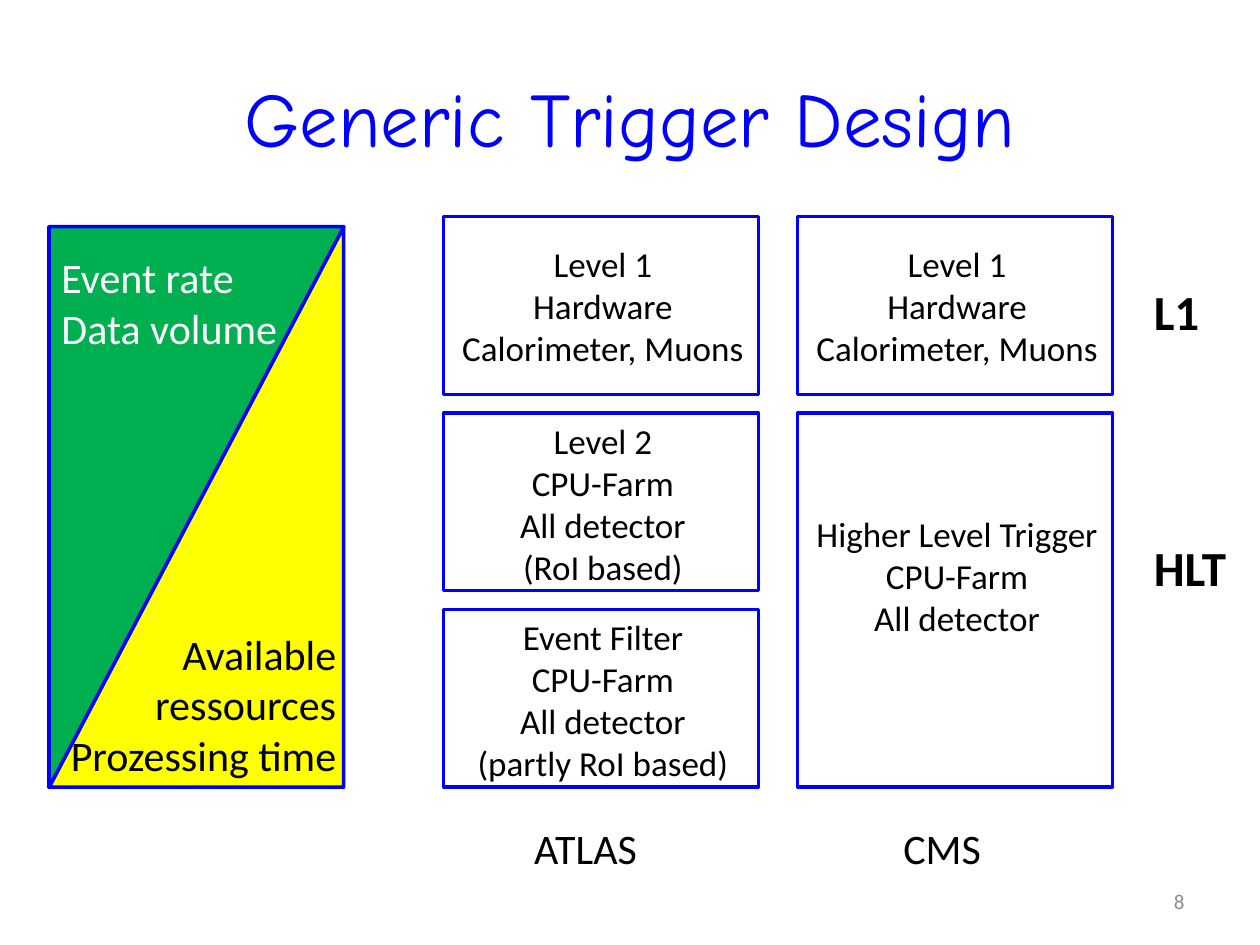
from dataclasses import dataclass

from pptx import Presentation
from pptx.dml.color import RGBColor as RGB
from pptx.enum.shapes import MSO_SHAPE as SHAPE
from pptx.enum.text import MSO_ANCHOR as ANCHOR, PP_ALIGN as ALIGN
from pptx.util import Cm, Pt


@dataclass(frozen=True)
class Theme:
    blue: RGB = RGB(0x00, 0x00, 0xFF)
    green: RGB = RGB(0x00, 0xB0, 0x50)
    yellow: RGB = RGB(0xFF, 0xFF, 0x00)
    white: RGB = RGB(0xFF, 0xFF, 0xFF)
    black: RGB = RGB(0x00, 0x00, 0x00)
    grey: RGB = RGB(0x8C, 0x8C, 0x8C)
    title_font: str = "Comic Neue"
    body_font: str = "Calibri"
    title: int = 44
    stage: int = 28
    label: int = 24
    level: int = 20
    number: int = 12
    line: int = 2


T = Theme()
GAP = 0.38
LEVEL_1 = ["Level 1", "Hardware", "Calorimeter, Muons"]
ATLAS = [
    (1, 0.4, LEVEL_1),
    (1, 0, ["Level 2", "CPU-Farm", "All detector", "(RoI based)"]),
    (1, 0, ["Event Filter", "CPU-Farm", "All detector", "(partly RoI based)"]),
]
CMS = [
    (1, 0.4, LEVEL_1),
    (2, 1.88, ["Higher Level Trigger", "CPU-Farm", "All detector"]),
]


def write(tf, lines, size, color=T.black, align=ALIGN.LEFT, bold=False, font=T.body_font):
    for i, line in enumerate(lines):
        p = tf.paragraphs[0] if i == 0 else tf.add_paragraph()
        p.alignment = align
        r = p.add_run()
        r.text = line
        r.font.name = font
        r.font.size = Pt(size)
        r.font.bold = bold
        r.font.color.rgb = color


def add_text(s, x, y, w, h, lines, size, **style):
    tf = s.shapes.add_textbox(Cm(x), Cm(y), Cm(w), Cm(h)).text_frame
    tf.word_wrap = False
    write(tf, lines, size, **style)
    return tf


def add_box(s, kind, x, y, w, h, fill):
    sp = s.shapes.add_shape(kind, Cm(x), Cm(y), Cm(w), Cm(h))
    sp.shadow.inherit = False
    sp.fill.solid()
    sp.fill.fore_color.rgb = fill
    sp.line.color.rgb = T.blue
    sp.line.width = Pt(T.line)
    return sp


def title(s, x, y, w, h):
    sp = s.shapes.title
    sp.left, sp.top, sp.width, sp.height = Cm(x), Cm(y), Cm(w), Cm(h)
    sp.text_frame.vertical_anchor = ANCHOR.MIDDLE
    write(sp.text_frame, ["Generic Trigger Design"], T.title, T.blue,
          ALIGN.CENTER, font=T.title_font)


def trade_off(s, x, y, w, h):
    add_box(s, SHAPE.RECTANGLE, x, y, w, h, T.white)
    for fill, turn in ((T.yellow, 0), (T.green, 180)):
        sp = add_box(s, SHAPE.ISOSCELES_TRIANGLE, x, y, w, h, fill)
        sp.adjustments[0] = 1
        sp.rotation = turn
    add_text(s, x, y + 0.38, 4.9, 2.31, ["Event rate", "Data volume"],
             T.label, color=T.white)
    tf = add_text(s, x + 0.2, y + h - 3.33, w - 0.1, 3.33,
                  ["Available", "ressources", "Prozessing time"],
                  T.label, align=ALIGN.RIGHT)
    tf.margin_left = 0


def experiment(s, x, y, w, h, levels, name, name_x, name_w):
    row = (h - 2 * GAP) / 3
    top = y
    for rows, inset, lines in levels:
        height = rows * row + (rows - 1) * GAP
        add_box(s, SHAPE.RECTANGLE, x, top, w, height, T.white)
        add_text(s, x + 0.04, top + inset, w, len(lines) * 0.85 + 0.27,
                 lines, T.level, align=ALIGN.CENTER)
        top += height + GAP
    add_text(s, x + name_x, y + h + 0.58, name_w, 1.27, [name], T.label)


def stages(s, x, y, w, h):
    add_text(s, x, y, 1.45, 1.45, ["L1"], T.stage, bold=True)
    add_text(s, x, y + h - 1.45, w, 1.45, ["HLT"], T.stage, bold=True)


def slide_number(s, x, y, w, h):
    tf = add_text(s, x, y, w, h, ["8"], T.number, color=T.grey, align=ALIGN.RIGHT)
    tf.word_wrap = True
    tf.vertical_anchor = ANCHOR.MIDDLE


def main():
    prs = Presentation()
    prs.slide_width, prs.slide_height = Cm(25.4), Cm(19.05)
    s = prs.slides.add_slide(prs.slide_layouts[5])
    title(s, 1.27, 0.76, 22.86, 3.18)
    trade_off(s, 0.99, 4.57, 5.94, 11.3)
    experiment(s, 8.94, 4.37, 6.35, 11.5, ATLAS, "ATLAS", 1.58, 2.62)
    experiment(s, 16.08, 4.37, 6.35, 11.5, CMS, "CMS", 1.88, 2.08)
    stages(s, 23.01, 5.56, 1.98, 6.61)
    slide_number(s, 18.21, 17.65, 5.92, 1.02)
    prs.save("out.pptx")


if __name__ == "__main__":
    main()
